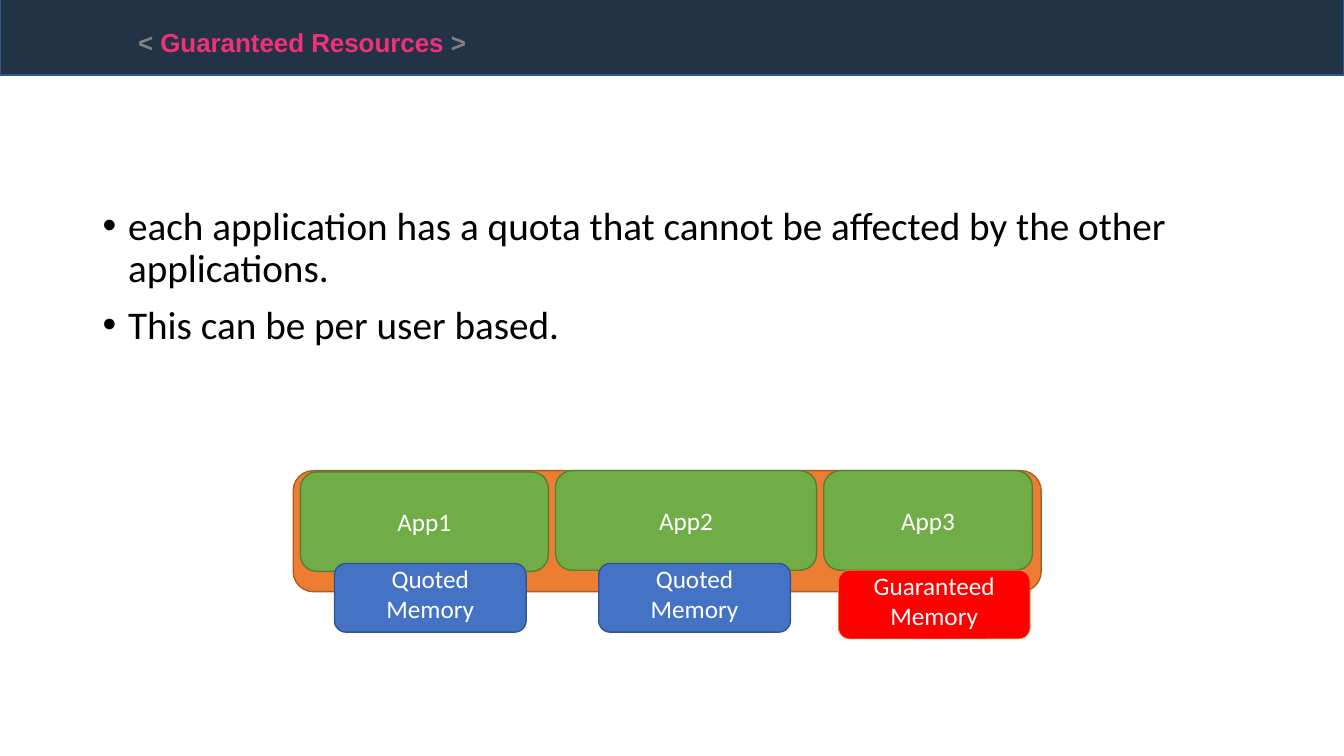
import pptx
import pptx.util
import pptx.dml.color
import pptx.enum.shapes
import pptx.enum.text
import pptx.oxml.ns
import lxml.etree

Cm = pptx.util.Cm
Pt = pptx.util.Pt
RGBColor = pptx.dml.color.RGBColor
Shape = pptx.enum.shapes.MSO_SHAPE
Anchor = pptx.enum.text.MSO_ANCHOR

NAVY = RGBColor(0x22, 0x33, 0x46)
DARK_BLUE = RGBColor(0x32, 0x54, 0x91)
BLUE = RGBColor(0x44, 0x72, 0xC4)
ORANGE = RGBColor(0xED, 0x7D, 0x31)
BROWN = RGBColor(0xAF, 0x5C, 0x24)
GREEN = RGBColor(0x70, 0xAD, 0x47)
DARK_GREEN = RGBColor(0x53, 0x80, 0x35)
RED = RGBColor(0xFF, 0x00, 0x00)
PINK = RGBColor(0xF1, 0x30, 0x7C)
GREY = RGBColor(0x80, 0x80, 0x80)
BLACK = RGBColor(0, 0, 0)
WHITE = RGBColor(0xFF, 0xFF, 0xFF)

TITLE_SPANS = [("< ", GREY), ("Guaranteed Resources ", PINK), (">", GREY)]
POINTS = [
    "each application has a quota that cannot be affected by the other applications.",
    "This can be per user based.",
]
# name, width, top
APPS = [("App1", 6.25, 0.03), ("App2", 6.58, 0), ("App3", 5.26, 0)]
# text, left, top, fill, line, line width
MEMORIES = [
    ("Quoted Memory", 1.04, 2.34, BLUE, DARK_BLUE, 1),
    ("Quoted Memory", 7.7, 2.34, BLUE, DARK_BLUE, 1),
    ("Guaranteed Memory", 13.74, 2.51, RED, ORANGE, 0.5),
]


def style_font(font, name, size, color):
    font.name = name
    font.size = Pt(size)
    font.color.rgb = color


def add_block(page, kind, box, fill, line, line_width=1, text="", anchor=Anchor.MIDDLE):
    """Add a filled shape; box is left, top, width and height in centimetres."""
    block = page.shapes.add_shape(kind, *map(Cm, box))
    block.shadow.inherit = False
    block.fill.solid()
    block.fill.fore_color.rgb = fill
    block.line.color.rgb = line
    block.line.width = Pt(line_width)
    if text:
        block.text_frame.text = text
        block.text_frame.vertical_anchor = anchor
        para = block.text_frame.paragraphs[0]
        para.alignment = pptx.enum.text.PP_ALIGN.CENTER
        style_font(para.runs[0].font, "Calibri", 18, WHITE)


def add_header(page, left, top, width, height):
    add_block(page, Shape.RECTANGLE, (left, top, width, height), NAVY, DARK_BLUE)
    title = page.shapes.add_textbox(Cm(left + 3.23), Cm(top + 0.5), Cm(10.13), Cm(1.63))
    title.text_frame.word_wrap = False
    para = title.text_frame.paragraphs[0]
    for text, color in TITLE_SPANS:
        span = para.add_run()
        span.text = text
        style_font(span.font, "Arial", 32, color)
        span.font.bold = True
        span._r.get_or_add_rPr().set("baseline", "30000")


def add_points(page, left, top, width, height):
    frame = page.shapes.add_textbox(Cm(left), Cm(top), Cm(width), Cm(height)).text_frame
    frame.word_wrap = True
    frame.text = "\n".join(POINTS)
    for number, para in enumerate(frame.paragraphs):
        para.line_spacing = 0.9
        if number:
            para.space_before = Pt(10)
        properties = para._p.get_or_add_pPr()
        properties.set("marL", str(Cm(0.64)))
        properties.set("indent", str(Cm(-0.64)))
        font = lxml.etree.SubElement(properties, pptx.oxml.ns.qn("a:buFont"))
        font.set("typeface", "Arial")
        bullet = lxml.etree.SubElement(properties, pptx.oxml.ns.qn("a:buChar"))
        bullet.set("char", "•")
        style_font(para.runs[0].font, "Calibri", 28, BLACK)


def add_memory_diagram(page, left, top, width, height):
    add_block(page, Shape.ROUNDED_RECTANGLE, (left, top, width, height), ORANGE, BROWN)
    gap = 0.18
    app_left = left + gap
    for name, app_width, drop in APPS:
        add_block(page, Shape.ROUNDED_RECTANGLE, (app_left, top + drop, app_width, 2.51),
                  GREEN, DARK_GREEN, text=name)
        app_left += app_width + gap
    for text, shift, drop, fill, line, line_width in MEMORIES:
        add_block(page, Shape.ROUNDED_RECTANGLE, (left + shift, top + drop, 4.83, 1.73),
                  fill, line, line_width, text, Anchor.BOTTOM)


def main():
    deck = pptx.Presentation()
    deck.slide_width = Cm(33.87)
    deck.slide_height = Cm(19.05)
    page = deck.slides.add_slide(deck.slide_layouts[6])
    add_header(page, 0, -0.09, 33.87, 1.98)
    add_points(page, 2.34, 5.08, 29.21, 12.09)
    add_memory_diagram(page, 7.39, 11.86, 18.85, 3.05)
    deck.save("out.pptx")


if __name__ == "__main__":
    main()
